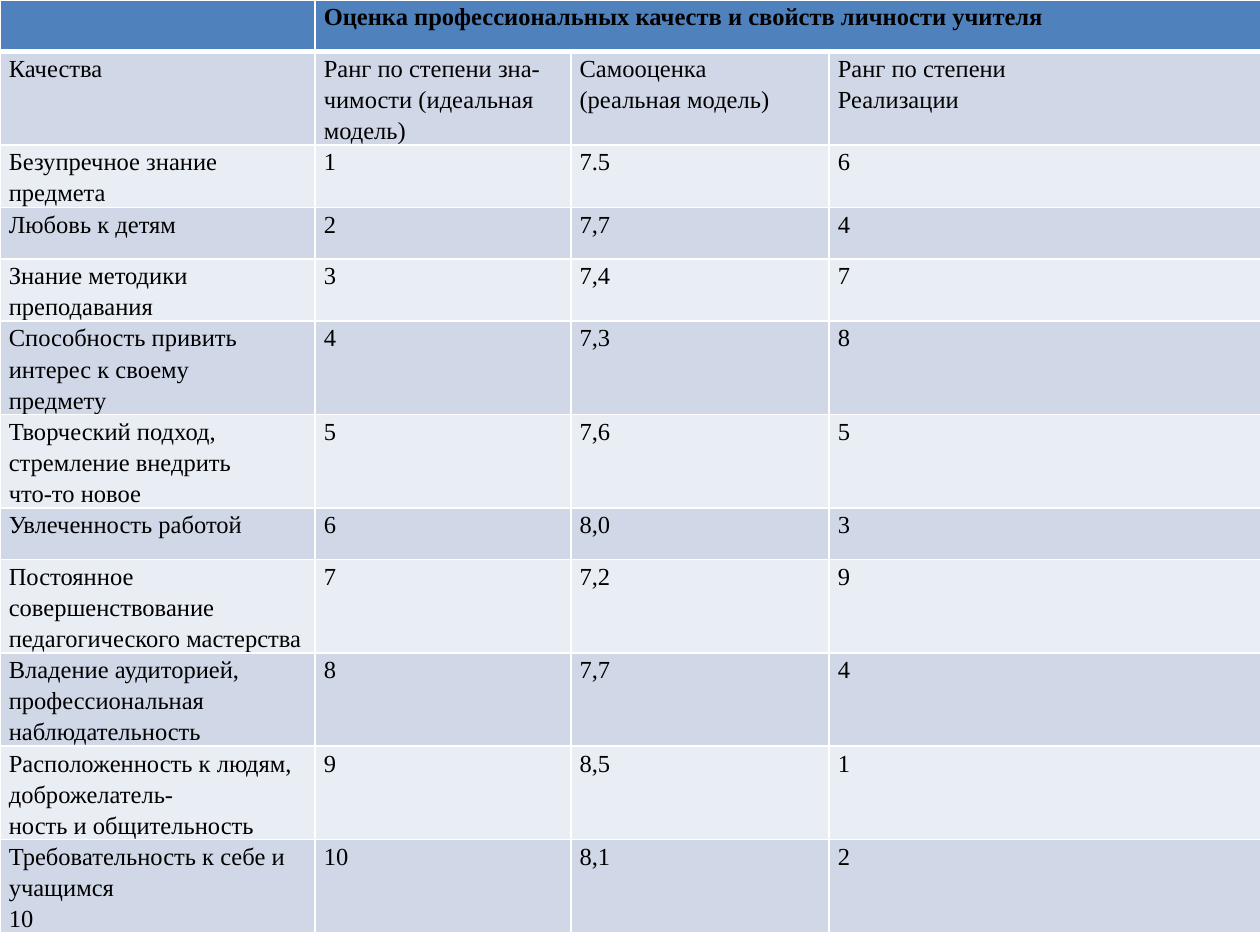
from lxml import etree
from pptx import Presentation
from pptx.dml.color import RGBColor
from pptx.oxml.ns import qn
from pptx.util import Inches, Pt

HUES = {"head": "4F81BD", "dark": "D0D8E8", "light": "E9EDF4", "line": "FFFFFF", "text": "000000"}
WIDTHS = [2.5, 2.03, 2.05, 3.43]
ROW = 0.41
INSETS = {"margin_left": Inches(0.07), "margin_right": Inches(0.07), "margin_top": 0, "margin_bottom": 0}
TITLE = "Оценка профессиональных качеств и свойств личности\u00a0учителя"
ROWS = [
    ("", TITLE, "", ""),
    ("Качества", "Ранг по степени зна-\nчимости (идеальная\nмодель)",
     "Самооценка\n(реальная модель)", "Ранг по степени\nРеализации"),
    ("Безупречное знание предмета", "1", "7.5", "6"),
    ("Любовь к детям", "2", "7,7", "4"),
    ("Знание методики преподавания", "3", "7,4", "7"),
    ("Способность привить интерес к своему\nпредмету", "4", "7,3", "8"),
    ("Творческий подход, стремление внедрить\nчто-то новое", "5", "7,6", "5"),
    ("Увлеченность работой", "6", "8,0", "3"),
    ("Постоянное совершенствование педагогического мастерства", "7", "7,2", "9"),
    ("Владение аудиторией, профессиональная\nнаблюдательность", "8", "7,7", "4"),
    ("Расположенность к людям, доброжелатель-\nность и общительность", "9", "8,5", "1"),
    ("Требовательность к себе и учащимся\n10", "10", "8,1", "2"),
]


class Deck:
    """Holds the style and the current slide."""

    def __init__(self):
        self.show = Presentation()
        self.show.slide_width, self.show.slide_height = Inches(10), Inches(7.5)
        self.slide = self.show.slides.add_slide(self.show.slide_layouts[6])
        self.font = {"name": "Times New Roman", "size": Pt(14)}

    def edge(self, cell, side, width):
        line = etree.SubElement(cell._tc.get_or_add_tcPr(), qn(f"a:ln{side}"), w=str(Pt(width)))
        fill = etree.SubElement(line, qn("a:solidFill"))
        etree.SubElement(fill, qn("a:srgbClr"), val=HUES["line"])

    def cell(self, cell, text, hue, bold, edges):
        for side, width in edges.items():
            self.edge(cell, side, width)
        cell.fill.solid()
        cell.fill.fore_color.rgb = RGBColor.from_string(HUES[hue])
        if not text:
            return
        for key, value in INSETS.items():
            setattr(cell, key, value)
        cell.text = text
        for para in cell.text_frame.paragraphs:
            para.line_spacing = 1.15
            for run in para.runs:
                for key, value in {**self.font, "bold": bold}.items():
                    setattr(run.font, key, value)
                run.font.color.rgb = RGBColor.from_string(HUES["text"])

    def table(self, rows, widths, height):
        frame = self.slide.shapes.add_table(
            len(rows), len(widths), 0, 0, Inches(sum(widths)), Inches(height))
        grid = frame.table
        for col, width in zip(grid.columns, widths):
            col.width = Inches(width)
        for r, texts in enumerate(rows):
            grid.rows[r].height = Inches(ROW)
            hue = "head" if r == 0 else ("light", "dark")[r % 2]
            edges = {"L": 1, "R": 1, "T": 3 if r == 1 else 1, "B": 3 if r == 0 else 1}
            for c, text in enumerate(texts):
                self.cell(grid.cell(r, c), text, hue, r == 0, edges)
        grid.cell(0, 1).merge(grid.cell(0, len(widths) - 1))
        frame.height = Inches(height)


def main():
    deck = Deck()
    deck.table(ROWS, WIDTHS, 7.92)
    deck.show.save("out.pptx")


if __name__ == "__main__":
    main()
